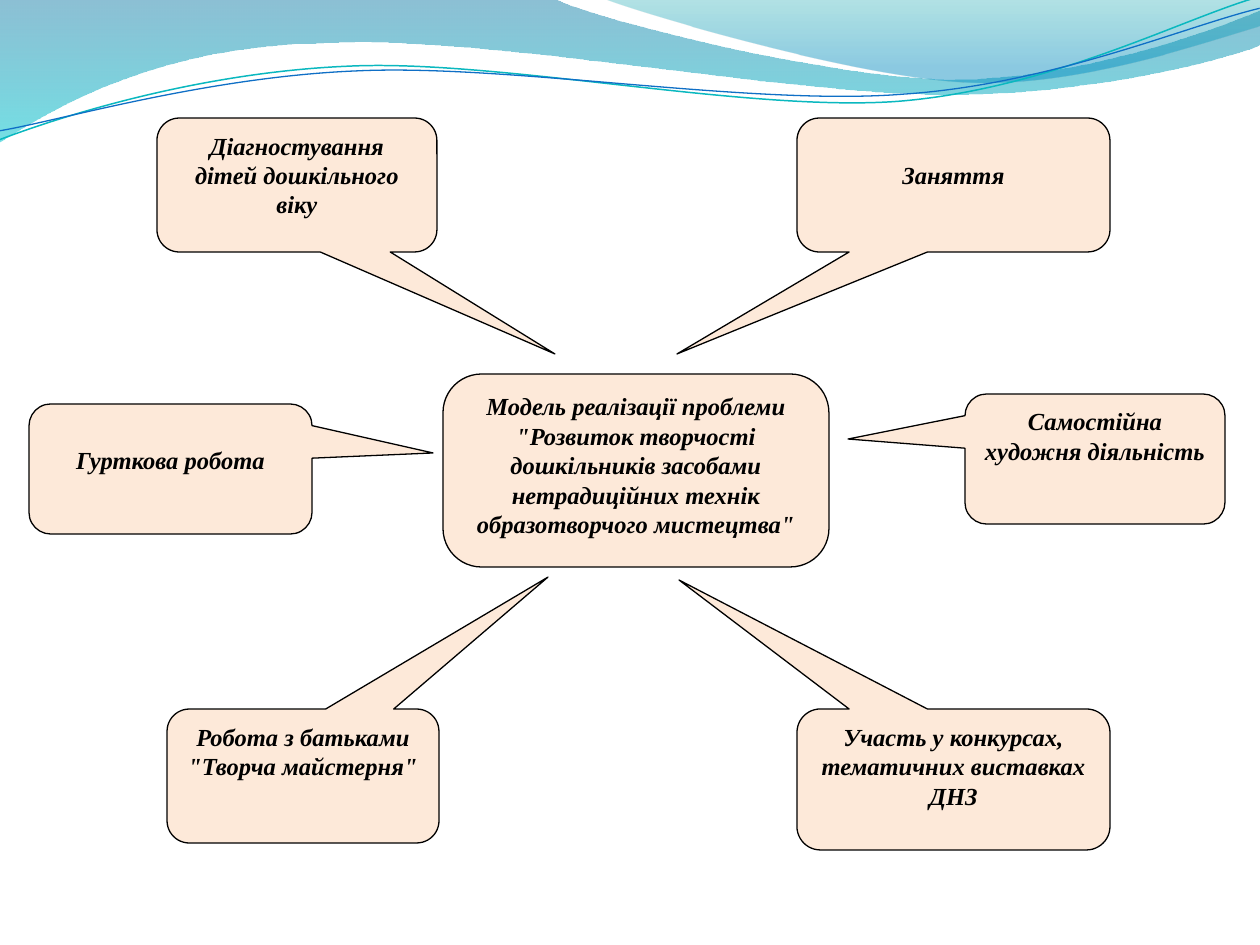
from dataclasses import dataclass

from lxml.etree import SubElement
from pptx import Presentation
from pptx.dml.color import RGBColor
from pptx.enum.shapes import MSO_SHAPE as ShapeKind
from pptx.enum.text import MSO_ANCHOR as Anchor, PP_ALIGN as Align
from pptx.oxml.ns import qn
from pptx.shapes.autoshape import Shape
from pptx.shapes.shapetree import GroupShapes, SlideShapes
from pptx.util import Emu, Pt

PX = 914400 / 126
FONT_NAME = "Times New Roman"
LINE_HEIGHT = 29
TOP_INSET = 6
RIBBON_ROTATION = -2.7

BLACK = RGBColor(0x00, 0x00, 0x00)
PEACH = RGBColor(0xFD, 0xE9, 0xD9)
TEAL = RGBColor(0x0A, 0xB8, 0xBF)
BLUE = RGBColor(0x0F, 0x6F, 0xC6)
DEEP_BLUE = RGBColor(0x00, 0x74, 0xA1)
CYAN = RGBColor(0x00, 0xC6, 0xCF)
DEEP_TEAL = RGBColor(0x00, 0xA1, 0xA9)
SKY_BLUE = RGBColor(0x00, 0x8B, 0xBF)

Point = tuple[int, int]
Segments = list[tuple[int, ...]]


@dataclass(frozen=True)
class Stop:
    position: float
    color: RGBColor
    opacity: int


@dataclass(frozen=True)
class Wave:
    start: Point
    segments: Segments
    stops: tuple[Stop, Stop]


@dataclass(frozen=True)
class Ribbon:
    start: Point
    segments: Segments
    color: RGBColor
    width: float


@dataclass(frozen=True)
class Box:
    left: int
    top: int
    width: int
    height: int
    text: str


@dataclass(frozen=True)
class Callout:
    box: Box
    tip: Point
    lines_above: int = 0


WAVES = [
    Wave((0, 0), [
        (554, -1),
        (600, 21, 837, 79, 955, 79),
        (1075, 79, 1207, 33, 1260, 11),
        (1261, 45),
        (1239, 55, 1096, 96, 940, 94),
        (784, 94, 481, 35, 324, 43),
        (163, 45, 58, 105, -1, 142),
    ], (Stop(0, DEEP_BLUE, 45), Stop(1, CYAN, 55))),
    Wave((604, -1), [
        (641, 14, 859, 78, 969, 82),
        (1079, 87, 1211, 40, 1260, 26),
        (1260, 0),
    ], (Stop(0, DEEP_TEAL, 30), Stop(0.8, SKY_BLUE, 45))),
]

RIBBONS = [
    Ribbon((-3, 110), [
        (58, 90, 199, 52, 350, 53),
        (499, 53, 745, 118, 896, 114),
        (1049, 109, 1184, 45, 1260, 27),
    ], TEAL, 0.85),
    Ribbon((-2, 101), [
        (57, 94, 207, 57, 357, 58),
        (509, 58, 750, 112, 902, 107),
        (1052, 104, 1188, 52, 1262, 38),
    ], BLUE, 0.75),
]

CENTER = Box(443, 374, 386, 193,
             'Модель реалізації проблеми "Розвиток творчості дошкільників '
             'засобами нетрадиційних технік образотворчого мистецтва"')

CALLOUTS = [
    Callout(Box(157, 118, 280, 134, "Діагностування дітей дошкільного віку"), (555, 354)),
    Callout(Box(797, 118, 313, 134, "Заняття"), (677, 354), 1),
    Callout(Box(29, 404, 283, 130, "Гурткова робота"), (433, 453), 1),
    Callout(Box(965, 394, 260, 130, "Самостійна художня діяльність"), (848, 439)),
    Callout(Box(167, 709, 272, 134, 'Робота з батьками "Творча майстерня"'), (548, 577)),
    Callout(Box(797, 709, 313, 141, "Участь у конкурсах, тематичних виставках ДНЗ"), (679, 580)),
]


def px(length: float) -> Emu:
    return Emu(round(length * PX))


def draw_outline(shapes: SlideShapes | GroupShapes, start: Point, segments: Segments, close: bool) -> Shape:
    builder = shapes.build_freeform(px(start[0]), px(start[1]))
    builder.add_line_segments([(px(s[-2]), px(s[-1])) for s in segments], close=close)
    shape = builder.convert_to_shape()
    shape.shadow.inherit = False
    lines = list(shape.element.spPr.iter(qn("a:lnTo")))
    for line, segment in zip(lines, segments):
        if len(segment) == 6:
            line.tag = qn("a:cubicBezTo")
            line.clear()
            for x, y in zip(segment[::2], segment[1::2]):
                SubElement(line, qn("a:pt"), x=str(px(x) - shape.left), y=str(px(y) - shape.top))
    return shape


def draw_wave(shapes: SlideShapes, wave: Wave) -> None:
    shape = draw_outline(shapes, wave.start, wave.segments, True)
    shape.line.fill.background()
    shape.fill.gradient()
    shape.fill.gradient_angle = 270
    for gradient_stop, stop in zip(shape.fill.gradient_stops, wave.stops):
        gradient_stop.position = stop.position
        gradient_stop.color.rgb = stop.color
    for color, stop in zip(shape.element.spPr.iter(qn("a:srgbClr")), wave.stops):
        SubElement(color, qn("a:alpha"), val=str(stop.opacity * 1000))


def draw_ribbon(shapes: GroupShapes, ribbon: Ribbon) -> None:
    shape = draw_outline(shapes, ribbon.start, ribbon.segments, False)
    shape.rotation = RIBBON_ROTATION
    shape.fill.background()
    shape.line.color.rgb = ribbon.color
    shape.line.width = Pt(ribbon.width)


def draw_box(shapes: SlideShapes, box: Box, kind: ShapeKind, lines_above: int = 0) -> Shape:
    shape = shapes.add_shape(kind, px(box.left), px(box.top), px(box.width), px(box.height))
    shape.shadow.inherit = False
    shape.fill.solid()
    shape.fill.fore_color.rgb = PEACH
    shape.line.color.rgb = BLACK
    shape.line.width = Pt(0.75)
    text_frame = shape.text_frame
    text_frame.word_wrap = True
    text_frame.vertical_anchor = Anchor.TOP
    text_frame.margin_top = px(TOP_INSET + lines_above * LINE_HEIGHT)
    text_frame.text = box.text
    paragraph = text_frame.paragraphs[0]
    paragraph.alignment = Align.CENTER
    font = paragraph.runs[0].font
    font.name = FONT_NAME
    font.size = Pt(14)
    font.bold = font.italic = True
    font.color.rgb = BLACK
    return shape


def draw_callout(shapes: SlideShapes, callout: Callout) -> None:
    box = callout.box
    shape = draw_box(shapes, box, ShapeKind.ROUNDED_RECTANGULAR_CALLOUT, callout.lines_above)
    shape.adjustments[0] = (callout.tip[0] - box.left) / box.width - 0.5
    shape.adjustments[1] = (callout.tip[1] - box.top) / box.height - 0.5


def main() -> None:
    presentation = Presentation()
    presentation.slide_width, presentation.slide_height = px(1260), px(945)
    shapes = presentation.slides.add_slide(presentation.slide_layouts[6]).shapes
    for wave in WAVES:
        draw_wave(shapes, wave)
    ribbon_group = shapes.add_group_shape()
    for ribbon in RIBBONS:
        draw_ribbon(ribbon_group.shapes, ribbon)
    draw_box(shapes, CENTER, ShapeKind.ROUNDED_RECTANGLE).adjustments[0] = 0.2
    for callout in CALLOUTS:
        draw_callout(shapes, callout)
    presentation.save("out.pptx")


if __name__ == "__main__":
    main()
